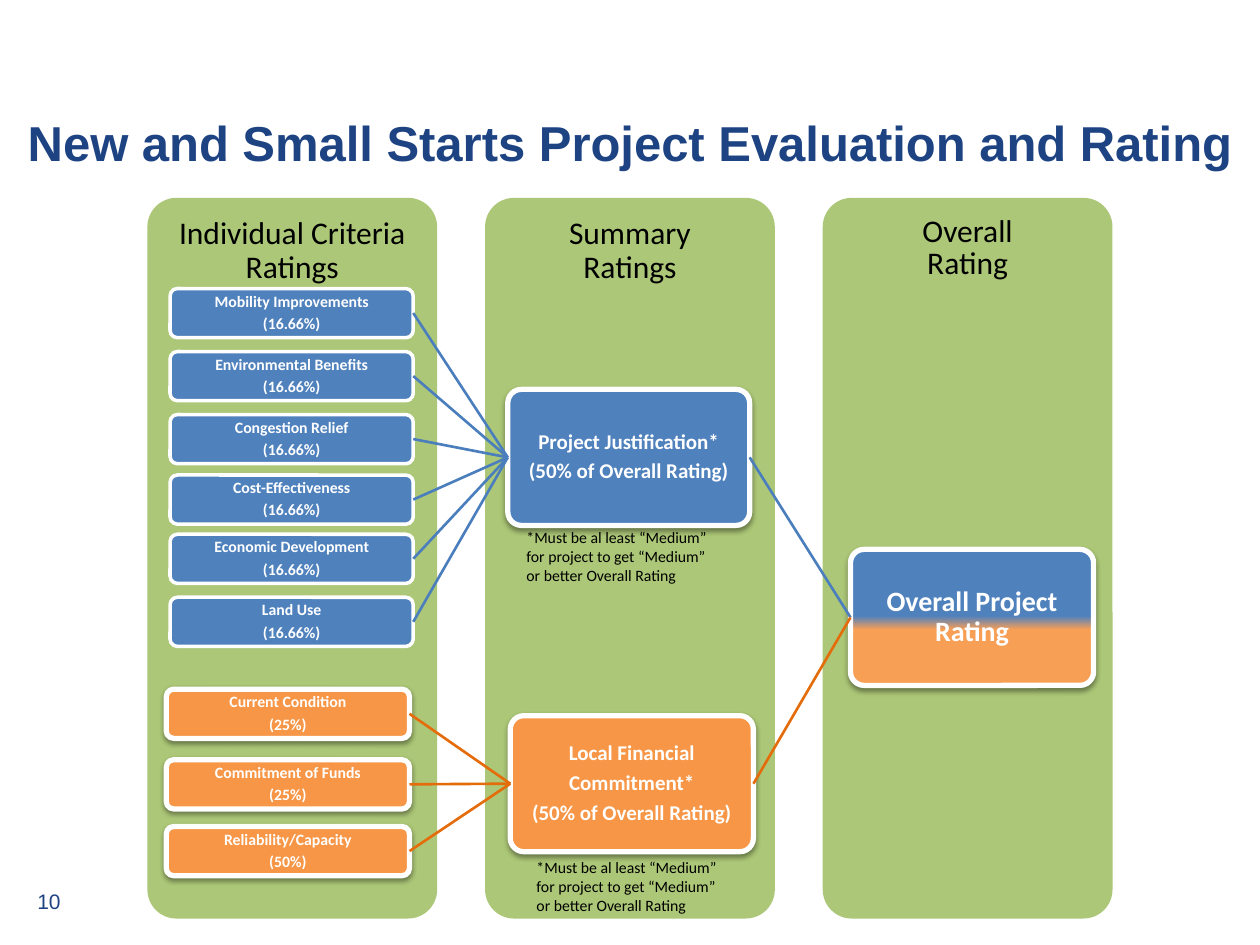
from lxml import etree
from pptx import Presentation
from pptx.dml.color import RGBColor
from pptx.enum import shapes, text
from pptx.oxml import ns
from pptx.util import Inches, Pt

COLORS = {
    "navy": "1E4383", "green": "ACC777", "blue": "4F81BD", "orange": "F79646",
    "light_orange": "F89F56", "blue_line": "4B7EBC", "orange_line": "E46C0A",
    "white": "FFFFFF", "black": "000000",
}
RGB = {name: RGBColor.from_string(value) for name, value in COLORS.items()}


def write(frame, lines, size=9, font="Calibri", color="black", bold=False,
          align=text.PP_ALIGN.LEFT, anchor=text.MSO_ANCHOR.TOP,
          spacing=1.0, after=0, inset=None):
    frame.word_wrap = True
    frame.vertical_anchor = anchor
    if inset is not None:
        frame.margin_left = frame.margin_right = Inches(inset)
        frame.margin_top = frame.margin_bottom = Inches(inset)
    for i, line in enumerate(lines):
        paragraph = frame.paragraphs[0] if i == 0 else frame.add_paragraph()
        paragraph.alignment = align
        paragraph.line_spacing = spacing
        paragraph.space_before = Pt(0)
        paragraph.space_after = Pt(after)
        run = paragraph.add_run()
        run.text = line
        run.font.size = Pt(size)
        run.font.name = font
        run.font.bold = bold
        run.font.color.rgb = RGB[color]


def add_box(left, top, width, height, fill, corner=0.1, border=0, shadow=False):
    box = slide.shapes.add_shape(
        shapes.MSO_SHAPE.ROUNDED_RECTANGLE,
        Inches(left), Inches(top), Inches(width), Inches(height))
    box.adjustments[0] = corner
    box.fill.solid()
    box.fill.fore_color.rgb = RGB[fill]
    if border:
        box.line.color.rgb = RGB["white"]
        box.line.width = Pt(border)
    else:
        box.line.fill.background()
    box.shadow.inherit = False
    if shadow:
        effects = box._element.spPr.find(ns.qn("a:effectLst"))
        outer = etree.SubElement(effects, ns.qn("a:outerShdw"), blurRad=str(Pt(3.1)),
                                 dist=str(Pt(1.6)), dir="5400000", rotWithShape="0")
        shade = etree.SubElement(outer, ns.qn("a:srgbClr"), val=COLORS["black"])
        etree.SubElement(shade, ns.qn("a:alpha"), val="38000")
    return box


prs = Presentation()
prs.slide_width, prs.slide_height = Inches(10), Inches(7.5)
slide = prs.slides.add_slide(prs.slide_layouts[5])
CENTER, MIDDLE = text.PP_ALIGN.CENTER, text.MSO_ANCHOR.MIDDLE

# Title and page number
title = slide.shapes.title
title.left, title.top = Inches(0), Inches(0.92)
title.width, title.height = Inches(10), Inches(0.58)
write(title.text_frame, ["New and Small Starts Project Evaluation and Rating"],
      size=28, font="Arial", color="navy", bold=True, align=CENTER, spacing=Pt(28))
page_number = slide.shapes.add_textbox(Inches(0.08), Inches(7), Inches(0.5), Inches(0.3))
write(page_number.text_frame, ["10"], size=12, font="Arial", color="navy",
      align=text.PP_ALIGN.RIGHT)

# Columns
headings = [
    (["Individual Criteria Ratings"], 0.9),
    (["Summary", "Ratings"], 0.9),
    (["Overall", "Rating"], Pt(18)),
]
for i, (heading, spacing) in enumerate(headings):
    column = add_box(1.17 + 2.68 * i, 1.57, 2.3, 5.72, "green")
    write(column.text_frame, heading, size=18, align=CENTER, spacing=spacing, inset=0.09)

# Summary and overall ratings
justification = add_box(4.03, 3.09, 1.92, 1.08, "blue", border=3, shadow=True)
commitment = add_box(4.05, 5.68, 1.93, 1.08, "orange", border=3, shadow=True)
overall = add_box(6.75, 4.36, 1.93, 1.08, "blue", border=3, shadow=True)
overall.fill.gradient()
overall.fill.gradient_angle = 270
for stop, position, color in zip(overall.fill.gradient_stops, (0.49, 0.59),
                                 ("blue", "light_orange")):
    stop.position = position
    stop.color.rgb = RGB[color]

ratings = [
    (justification, ["Project Justification*", "(50% of Overall Rating)"], 12),
    (commitment, ["Local Financial", "Commitment*", "(50% of Overall Rating)"], 12),
    (overall, ["Overall Project Rating"], 16),
]
for rating, lines, size in ratings:
    write(rating.text_frame, lines, size=size, color="white", bold=True, align=CENTER,
          anchor=MIDDLE, spacing=0.9, after=0.33 * size, inset=0.03)

# Criteria: name, weight, top
justification_criteria = [
    ("Mobility Improvements", "16.66%", 2.29),
    ("Environmental Benefits", "16.66%", 2.79),
    ("Congestion Relief", "16.66%", 3.29),
    ("Cost-Effectiveness", "16.66%", 3.77),
    ("Economic Development", "16.66%", 4.24),
    ("Land Use", "16.66%", 4.74),
]
commitment_criteria = [
    ("Current Condition", "25%", 5.47),
    ("Commitment of Funds", "25%", 6.03),
    ("Reliability/Capacity", "50%", 6.56),
]
groups = [
    (justification_criteria, justification, 1.35, "blue", 2, False),
    (commitment_criteria, commitment, 1.32, "orange", 3, True),
]
links = []
for criteria, summary, left, color, border, shadow in groups:
    for name, weight, top in criteria:
        criterion = add_box(left, top, 1.93, 0.39, color, 0.15, border, shadow)
        write(criterion.text_frame, [name, f"({weight})"], color="white", bold=True,
              align=CENTER, anchor=MIDDLE, spacing=0.9, after=3, inset=0.04)
        links.append((criterion, summary, color + "_line"))
    links.append((summary, overall, color + "_line"))

# Connectors from right side to left side
for source, target, color in links:
    link = slide.shapes.add_connector(shapes.MSO_CONNECTOR.STRAIGHT, 0, 0, 0, 0)
    link.begin_connect(source, 3)
    link.end_connect(target, 1)
    link.line.color.rgb = RGB[color]
    link.line.width = Pt(1.5)
    etree.SubElement(link._element.spPr, ns.qn("a:effectLst"))

# Footnotes under the summary ratings
for left, top in [(4.08, 4.14), (4.16, 6.76)]:
    footnote = slide.shapes.add_textbox(Inches(left), Inches(top), Inches(1.67), Inches(0.56))
    write(footnote.text_frame, ["*Must be al least “Medium” for project to get “Medium” "
                                "or better Overall Rating"])

prs.save("out.pptx")
